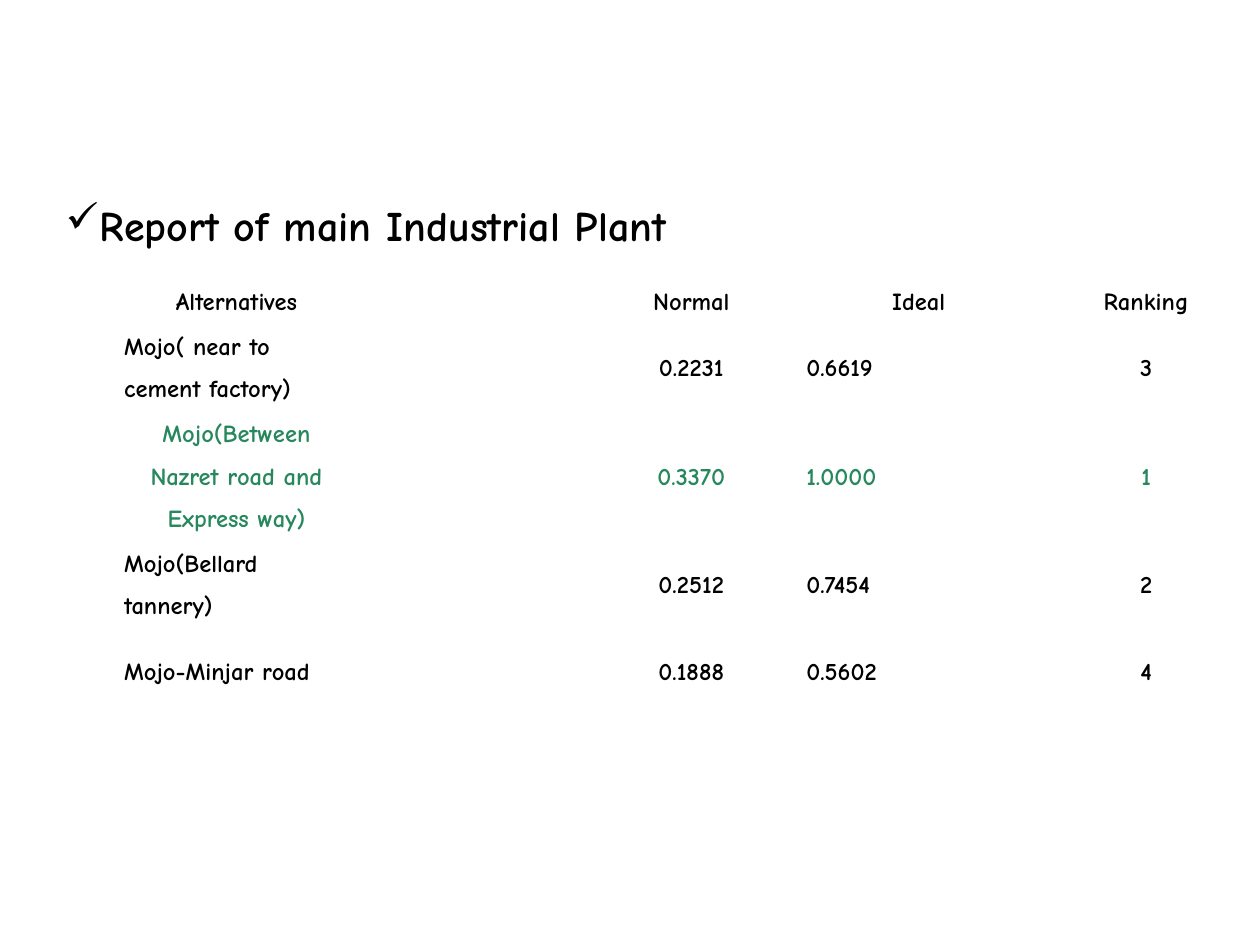
from lxml.etree import SubElement
from pptx import Presentation
from pptx.dml.color import RGBColor
from pptx.enum.text import MSO_ANCHOR, MSO_AUTO_SIZE, PP_ALIGN
from pptx.oxml.ns import qn
from pptx.util import Inches, Pt

FONT = "Comic Neue"
COLORS = {"text": "000000", "best": "28885D", "border": "FFFFFF"}
COLUMNS = 6
ROW_HEIGHTS = [0.35, 0.69, 1.03, 0.69, 0.69]
HEADER = ["Alternatives", "Normal", "Ideal", "Ranking"]
ALTERNATIVES = [
    ["Mojo( near to cement factory)", "0.2231", "0.6619", "3"],
    ["Mojo(Between Nazret road and Express way)", "0.3370", "1.0000", "1"],
    ["Mojo(Bellard tannery)", "0.2512", "0.7454", "2"],
    ["Mojo-Minjar road", "0.1888", "0.5602", "4"],
]
FILLED_COLUMNS = [1, 3, 4, 5]
IDEAL_COLUMN = 4


def style_paragraph(paragraph, size, color, alignment):
    paragraph.alignment = alignment
    font = paragraph.font
    font.name, font.size, font.bold = FONT, Pt(size), True
    font.color.rgb = RGBColor.from_string(COLORS[color])


def add_check_bullet(paragraph, indent):
    properties = paragraph._p.get_or_add_pPr()
    properties.set("marL", str(Inches(indent)))
    properties.set("indent", str(-Inches(indent)))
    SubElement(properties, qn("a:buChar"), char="✓")


def add_title(slide, left, top, width, height):
    title = slide.shapes.title
    title.left, title.top = Inches(left), Inches(top)
    title.width, title.height = Inches(width), Inches(height)
    frame = title.text_frame
    frame.text = "Report of main Industrial Plant"
    frame.word_wrap = True
    frame.auto_size = MSO_AUTO_SIZE.NONE
    frame.vertical_anchor = MSO_ANCHOR.MIDDLE
    frame.margin_bottom = Inches(0.4)
    paragraph = frame.paragraphs[0]
    add_check_bullet(paragraph, 0.27)
    style_paragraph(paragraph, 24, "text", PP_ALIGN.LEFT)


def format_cell(cell):
    cell.margin_left = cell.margin_right = Inches(0.01)
    cell.margin_top = cell.margin_bottom = Inches(0.01)
    cell.vertical_anchor = MSO_ANCHOR.MIDDLE
    properties = cell._tc.get_or_add_tcPr()
    for side in ("lnL", "lnR", "lnT", "lnB"):
        line = SubElement(properties, qn(f"a:{side}"), w=str(Pt(1.5)))
        fill = SubElement(line, qn("a:solidFill"))
        SubElement(fill, qn("a:srgbClr"), val=COLORS["border"])
    cell.fill.background()


def add_ranking_table(slide, left, top, width):
    rows = [HEADER] + ALTERNATIVES
    table = slide.shapes.add_table(
        len(rows), COLUMNS, Inches(left), Inches(top),
        Inches(width), Inches(sum(ROW_HEIGHTS))).table
    table.first_row = table.horz_banding = False
    for row, height in zip(table.rows, ROW_HEIGHTS):
        row.height = Inches(height)
    for cell in table.iter_cells():
        format_cell(cell)

    for row_index, values in enumerate(rows):
        is_best = values[-1] == "1"
        for column, value in zip(FILLED_COLUMNS, values):
            is_name = column == FILLED_COLUMNS[0]
            is_left = row_index > 0 and (
                column == IDEAL_COLUMN or (is_name and not is_best))
            cell = table.cell(row_index, column)
            cell.text = value
            paragraph = cell.text_frame.paragraphs[0]
            paragraph.line_spacing = 1.5
            style_paragraph(paragraph, 14, "best" if is_best else "text",
                            PP_ALIGN.LEFT if is_left else PP_ALIGN.CENTER)


def main():
    presentation = Presentation()
    presentation.slide_width, presentation.slide_height = Inches(10), Inches(7.5)
    slide = presentation.slides.add_slide(presentation.slide_layouts[5])
    add_title(slide, 0.42, 1.33, 9, 1.25)
    add_ranking_table(slide, -0.83, 2.17, 10.83)
    presentation.save("out.pptx")


if __name__ == "__main__":
    main()
